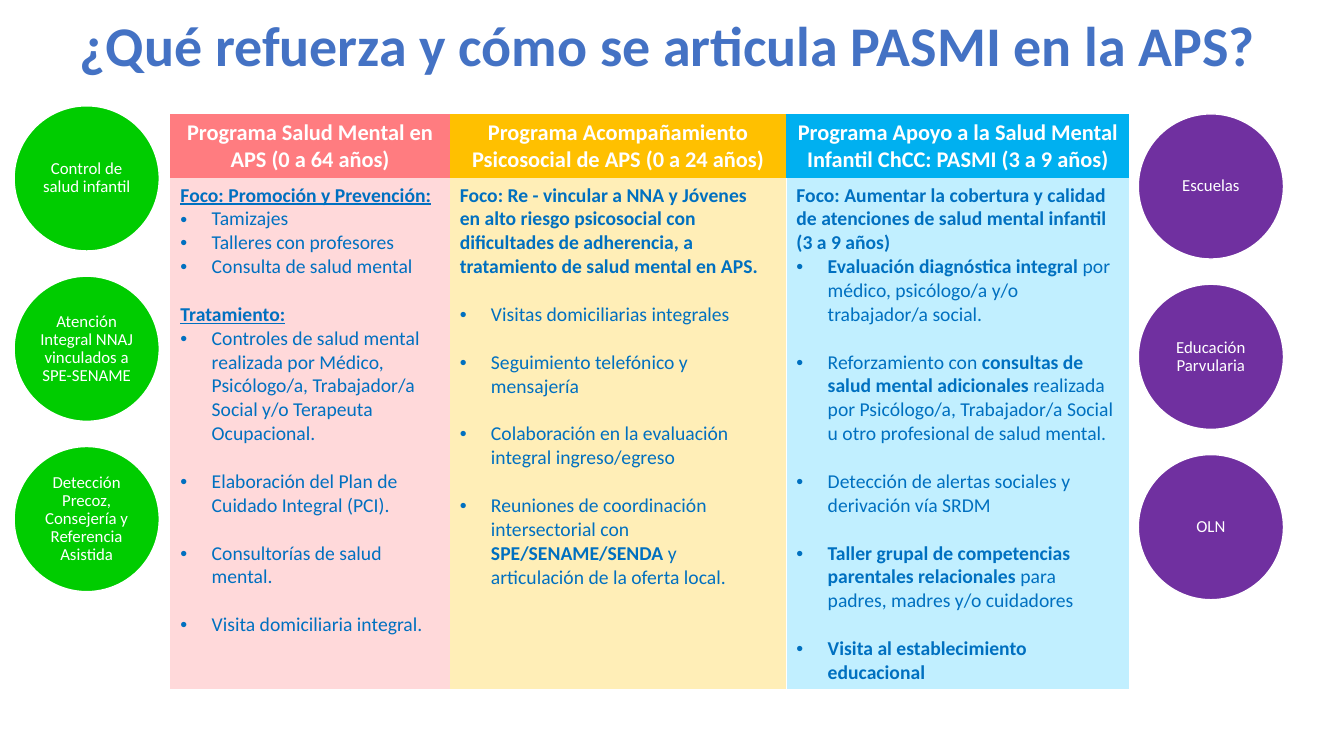
"""Build the slide on how PASMI fits into primary care programmes."""
from dataclasses import dataclass

from lxml import etree
from pptx import Presentation
from pptx import util as u
from pptx.dml.color import RGBColor
from pptx.enum import shapes, text
from pptx.oxml.ns import qn

PX = 9144


@dataclass(frozen=True)
class Theme:
    font: str = "Calibri"
    title: str = "4472C4"
    white: str = "FFFFFF"
    body: str = "0070C0"
    green: str = "00CC00"
    purple: str = "7030A0"
    title_pt: int = 40
    header_pt: int = 16
    body_pt: int = 14
    circle_pt: int = 12
    line_gap_pt: float = 17.1


@dataclass(frozen=True)
class Heading:
    words: str
    underline: bool = False
    gap: bool = False
    right: int = 0


@dataclass(frozen=True)
class Item:
    words: str
    gap: bool = True


@dataclass(frozen=True)
class Programme:
    name: str
    width: int
    header_fill: str
    body_fill: str
    white_edges: tuple[str, ...]
    content: tuple[Heading | Item, ...]


@dataclass(frozen=True)
class CircleColumn:
    left: int
    top: int
    fill: str
    labels: tuple[str, ...]


THEME = Theme()
TITLE = "¿Qué refuerza y cómo se articula PASMI en la APS?"
PROGRAMMES = (
    Programme("Programa Salud Mental en APS (0 a 64 años)", 277, "FF7C80", "FFD9DA", (), (
        Heading("Foco: Promoción y Prevención:", underline=True),
        Item("Tamizajes", gap=False),
        Item("Talleres con profesores", gap=False),
        Item("Consulta de salud mental", gap=False),
        Heading("Tratamiento:", underline=True, gap=True),
        Item("Controles de salud mental realizada por Médico, Psicólogo/a, "
             "Trabajador/a Social y/o Terapeuta Ocupacional.", gap=False),
        Item("Elaboración del Plan de Cuidado Integral (PCI)."),
        Item("Consultorías de salud mental."),
        Item("Visita domiciliaria integral."),
    )),
    Programme("Programa Acompañamiento Psicosocial de APS (0 a 24 años)", 334,
              "FFC000", "FFEEB7", ("a:lnR",), (
        Heading("Foco: Re - vincular a NNA y Jóvenes en alto riesgo psicosocial con "
                "dificultades de adherencia, a tratamiento de salud mental en APS.", right=10),
        Item("Visitas domiciliarias integrales"),
        Item("Seguimiento telefónico y mensajería"),
        Item("Colaboración en la evaluación integral ingreso/egreso"),
        Item("Reuniones de coordinación intersectorial con **SPE/SENAME/SENDA** "
             "y articulación de la oferta local."),
    )),
    Programme("Programa Apoyo a la Salud Mental Infantil ChCC: PASMI (3 a 9 años)", 340,
              "00B0F0", "C1EFFF", ("a:lnL",), (
        Heading("Foco: Aumentar la cobertura y calidad de atenciones de salud mental "
                "infantil (3 a 9 años)"),
        Item("**Evaluación diagnóstica integral** por médico, psicólogo/a y/o "
             "trabajador/a social.", gap=False),
        Item("Reforzamiento con **consultas de salud mental adicionales** realizada por "
             "Psicólogo/a, Trabajador/a Social u otro profesional de salud mental."),
        Item("Detección de alertas sociales y derivación vía SRDM"),
        Item("**Taller grupal de competencias parentales relacionales** para padres, "
             "madres y/o cuidadores"),
        Item("**Visita al establecimiento educacional**"),
    )),
)
CIRCLE_COLUMNS = (
    CircleColumn(14, 105, THEME.green, (
        "Control de salud infantil",
        "Atención Integral NNAJ vinculados a SPE-SENAME",
        "Detección Precoz, Consejería y Referencia Asistida",
    )),
    CircleColumn(1129, 113, THEME.purple, ("Escuelas", "Educación Parvularia", "OLN")),
)
CIRCLE_SIZE, CIRCLE_PITCH = 144, 169
BULLET_INDENT = 31


def rgb(colour: str) -> RGBColor:
    return RGBColor.from_string(colour)


def write(paragraph, words: str, *, size: int, colour: str, bold: bool = False,
          underline: bool = False, centred: bool = False) -> None:
    """Fill a paragraph; words between double asterisks switch weight."""
    if centred:
        paragraph.alignment = text.PP_ALIGN.CENTER
    for index, piece in enumerate(words.split("**")):
        if piece:
            run = paragraph.add_run()
            run.text = piece
            font = run.font
            font.name, font.size = THEME.font, u.Pt(size)
            font.bold, font.underline = bold != (index % 2 == 1), underline
            font.color.rgb = rgb(colour)


def add_bullet(paragraph) -> None:
    properties = paragraph._p.get_or_add_pPr()
    properties.set("marL", str(BULLET_INDENT * PX))
    properties.set("indent", str(-BULLET_INDENT * PX))
    etree.SubElement(properties, qn("a:buFont"), typeface="Arial")
    etree.SubElement(properties, qn("a:buChar"), char="•")


def add_white_edge(cell, edge: str) -> None:
    line = etree.SubElement(cell._tc.get_or_add_tcPr(), qn(edge), w=str(u.Pt(1)))
    fill = etree.SubElement(line, qn("a:solidFill"))
    etree.SubElement(fill, qn("a:srgbClr"), val=THEME.white)


def paint(cell, colour: str) -> None:
    cell.fill.solid()
    cell.fill.fore_color.rgb = rgb(colour)


def fill_body(cell, content: tuple[Heading | Item, ...]) -> None:
    frame = cell.text_frame
    for index, entry in enumerate(content):
        paragraph = frame.add_paragraph() if index else frame.paragraphs[0]
        if index and entry.gap:
            paragraph.space_before = u.Pt(THEME.line_gap_pt)
        if isinstance(entry, Heading):
            paragraph._p.get_or_add_pPr().set("marR", str(entry.right * PX))
            write(paragraph, entry.words, size=THEME.body_pt, colour=THEME.body,
                  bold=True, underline=entry.underline)
        else:
            add_bullet(paragraph)
            write(paragraph, entry.words, size=THEME.body_pt, colour=THEME.body)


def add_title(slide) -> None:
    frame = slide.shapes.add_textbox(0, -2 * PX, 1324 * PX, 91 * PX).text_frame
    frame.word_wrap = True
    frame.vertical_anchor = text.MSO_ANCHOR.MIDDLE
    write(frame.paragraphs[0], TITLE, size=THEME.title_pt, colour=THEME.title,
          bold=True, centred=True)


def add_programmes(slide) -> None:
    width = sum(programme.width for programme in PROGRAMMES)
    programmes = slide.shapes.add_table(
        2, len(PROGRAMMES), 169 * PX, 113 * PX, width * PX, 571 * PX).table
    programmes.horz_banding = False
    style = programmes._tbl.tblPr.find(qn("a:tableStyleId"))
    style.text = "{2D5ABB26-0587-4C30-8999-92F81FD0307C}"
    programmes.rows[0].height, programmes.rows[1].height = 64 * PX, 507 * PX
    for column, programme in enumerate(PROGRAMMES):
        programmes.columns[column].width = programme.width * PX
        header, body = programmes.cell(0, column), programmes.cell(1, column)
        header.vertical_anchor = text.MSO_ANCHOR.MIDDLE
        write(header.text_frame.paragraphs[0], programme.name, size=THEME.header_pt,
              colour=THEME.white, bold=True, centred=True)
        paint(header, programme.header_fill)
        fill_body(body, programme.content)
        for edge in programme.white_edges:
            add_white_edge(body, edge)
        paint(body, programme.body_fill)


def add_circles(slide, column: CircleColumn) -> None:
    for index, label in enumerate(column.labels):
        circle = slide.shapes.add_shape(
            shapes.MSO_SHAPE.OVAL, column.left * PX,
            (column.top + index * CIRCLE_PITCH) * PX, CIRCLE_SIZE * PX, CIRCLE_SIZE * PX)
        circle.shadow.inherit = False
        circle.fill.solid()
        circle.fill.fore_color.rgb = rgb(column.fill)
        circle.line.color.rgb, circle.line.width = rgb(THEME.white), u.Pt(1)
        frame = circle.text_frame
        frame.word_wrap = True
        frame.vertical_anchor = text.MSO_ANCHOR.MIDDLE
        frame.margin_left = frame.margin_right = frame.margin_top = frame.margin_bottom = 0
        frame.paragraphs[0].line_spacing = 0.9
        write(frame.paragraphs[0], label, size=THEME.circle_pt, colour=THEME.white, centred=True)


def main() -> None:
    deck = Presentation()
    deck.slide_width, deck.slide_height = 1333 * PX, 750 * PX
    slide = deck.slides.add_slide(deck.slide_layouts[6])
    add_title(slide)
    add_programmes(slide)
    for column in CIRCLE_COLUMNS:
        add_circles(slide, column)
    deck.save("out.pptx")


if __name__ == "__main__":
    main()
